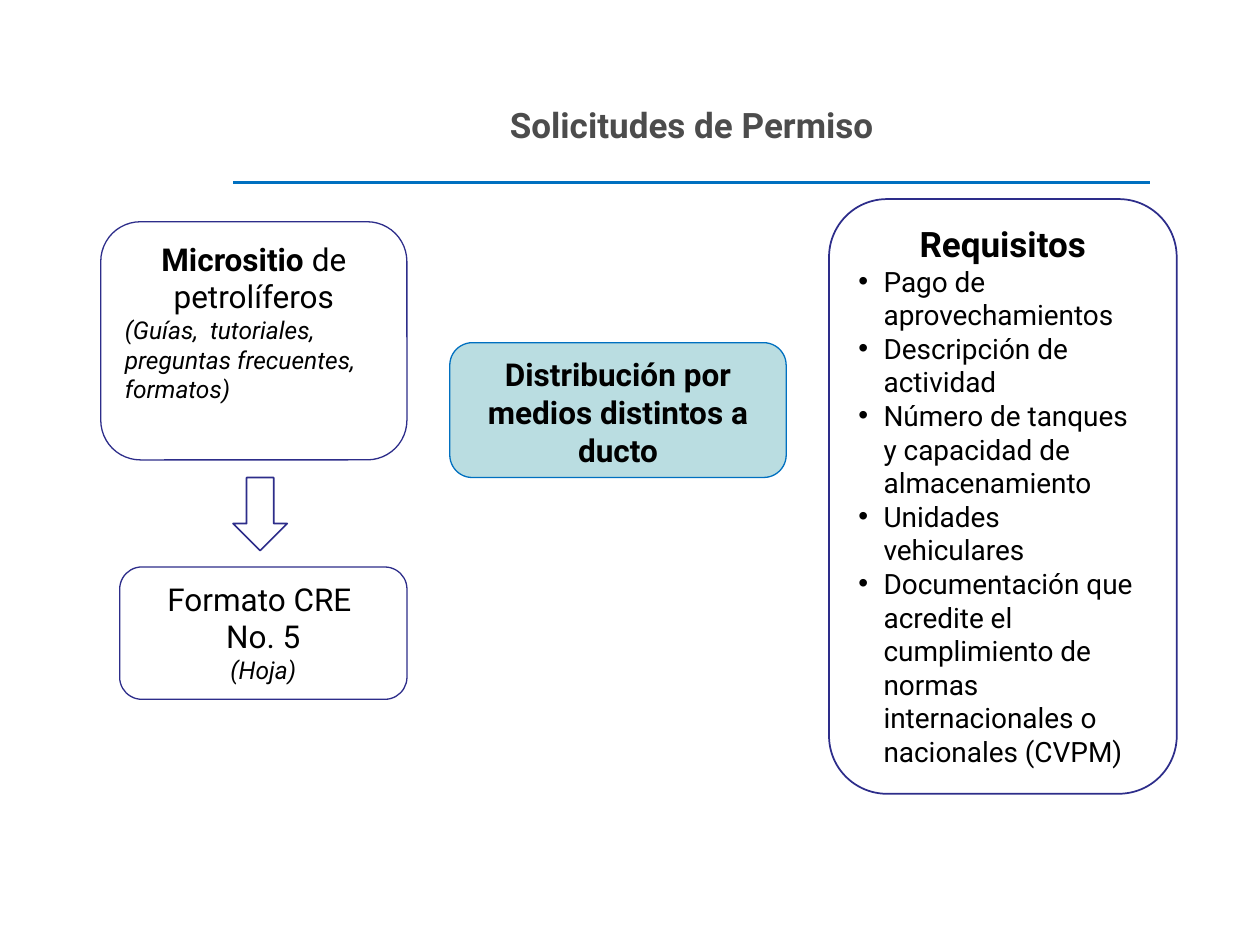
from lxml import etree
from pptx import Presentation
from pptx.dml.color import RGBColor
from pptx.enum.shapes import MSO_CONNECTOR, MSO_SHAPE
from pptx.enum.text import MSO_ANCHOR, PP_ALIGN
from pptx.oxml.ns import qn
from pptx.util import Pt

CENTER, LEFT = PP_ALIGN.CENTER, PP_ALIGN.LEFT
TOP, MIDDLE = MSO_ANCHOR.TOP, MSO_ANCHOR.MIDDLE
ROUNDED, DOWN_ARROW = MSO_SHAPE.ROUNDED_RECTANGLE, MSO_SHAPE.DOWN_ARROW
STRAIGHT = MSO_CONNECTOR.STRAIGHT

FONT = "Roboto"
BLACK, WHITE, GRAY = "000000", "FFFFFF", "4C4C4C"
NAVY, BLUE, TEAL = "2D2D8A", "0070C0", "BADDE1"
BULLET_INDENT = 14.4

TITLE = "Solicitudes de Permiso"
TITLE_BOX = (133.2, 25.92, 524.16, 90)
RULE = (133.2, 104.4, 657.36, 104.4)
ARROW_BOX = (133.2, 272.88, 30.96, 41.76)

REQUIREMENTS = [
    "Pago de aprovechamientos",
    "Descripción de actividad",
    "Número de tanques y capacidad de almacenamiento",
    "Unidades vehiculares",
    "Documentación que acredite el cumplimiento de normas "
    "internacionales o nacionales (CVPM)",
]

CARDS = [
    {"box": (257.04, 195.84, 192.24, 77.04), "fill": TEAL, "line": BLUE, "width": 0.75,
     "text": [([("Distribución por medios distintos a ducto", {"bold": True})], {})]},
    {"box": (57.6, 126.72, 174.96, 136.08), "fill": WHITE, "line": NAVY, "width": 0.75,
     "text": [([("Micrositio ", {"bold": True}), ("de petrolíferos", {})], {}),
              ([("(Guías,  tutoriales, preguntas frecuentes, formatos)",
                 {"size": 14, "italic": True})], {"align": LEFT})]},
    {"box": (68.4, 324, 164.16, 75.6), "fill": WHITE, "line": NAVY, "width": 0.75,
     "text": [([("Formato CRE ", {})], {}),
              ([("No. 5", {})], {}),
              ([("(Hoja)", {"size": 14, "italic": True})], {})]},
    {"box": (473.76, 113.76, 198.72, 339.84), "fill": WHITE, "line": NAVY, "width": 1,
     "text": [([("Requisitos", {"size": 20, "bold": True})], {})]
     + [([(item, {"size": 16})], {"align": LEFT, "bullet": True})
        for item in REQUIREMENTS]},
]


def color(value):
    return RGBColor.from_string(value)


def points(values):
    return [Pt(value) for value in values]


def add_text(paragraph, text, size=18, bold=False, italic=False, fill=BLACK):
    run = paragraph.add_run()
    run.text = text
    font = run.font
    font.name, font.size = FONT, Pt(size)
    font.bold, font.italic = bold, italic
    font.color.rgb = color(fill)


def add_bullet(paragraph):
    properties = paragraph._p.get_or_add_pPr()
    properties.set("marL", str(Pt(BULLET_INDENT)))
    properties.set("indent", str(-Pt(BULLET_INDENT)))
    etree.SubElement(properties, qn("a:buFont")).set("typeface", "Arial")
    etree.SubElement(properties, qn("a:buChar")).set("char", "•")


def fill_frame(frame, paragraphs, anchor=TOP):
    frame.word_wrap = True
    frame.vertical_anchor = anchor
    for index, (runs, layout) in enumerate(paragraphs):
        paragraph = frame.add_paragraph() if index else frame.paragraphs[0]
        paragraph.alignment = layout.get("align", CENTER)
        if layout.get("bullet"):
            add_bullet(paragraph)
        for text, style in runs:
            add_text(paragraph, text, **style)


def add_panel(slide, kind, box, fill, line, width):
    shape = slide.shapes.add_shape(kind, *points(box))
    shape.shadow.inherit = False
    shape.fill.solid()
    shape.fill.fore_color.rgb = color(fill)
    shape.line.color.rgb = color(line)
    shape.line.width = Pt(width)
    return shape


def add_rule(slide, ends):
    rule = slide.shapes.add_connector(STRAIGHT, *points(ends))
    rule.line.color.rgb = color(BLUE)
    rule.line.width = Pt(1.5)
    etree.SubElement(rule._element.spPr, qn("a:effectLst"))


def main():
    presentation = Presentation()
    presentation.slide_width, presentation.slide_height = Pt(720), Pt(540)
    slide = presentation.slides.add_slide(presentation.slide_layouts[5])

    title = slide.shapes.title
    title.left, title.top, title.width, title.height = points(TITLE_BOX)
    fill_frame(title.text_frame,
               [([(TITLE, {"size": 20, "bold": True, "fill": GRAY})], {})], MIDDLE)

    for card in CARDS:
        shape = add_panel(slide, ROUNDED, card["box"], card["fill"],
                          card["line"], card["width"])
        fill_frame(shape.text_frame, card["text"])
    add_panel(slide, DOWN_ARROW, ARROW_BOX, WHITE, NAVY, 1)
    add_rule(slide, RULE)

    presentation.save("out.pptx")


if __name__ == "__main__":
    main()
